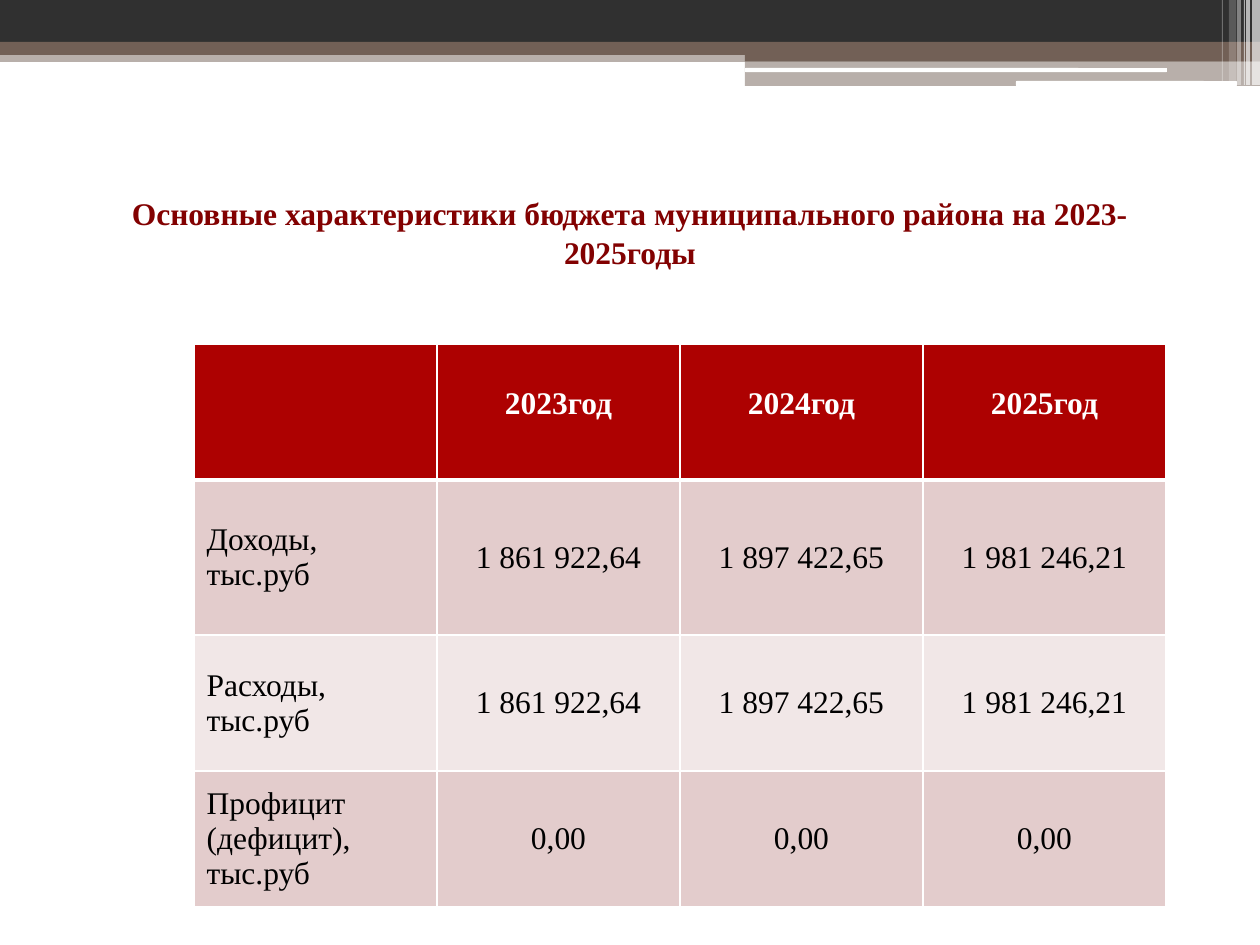
from typing import NamedTuple

from lxml import etree
from pptx import Presentation
from pptx.dml.color import RGBColor
from pptx.enum.shapes import MSO_SHAPE
from pptx.enum.text import MSO_ANCHOR, PP_ALIGN
from pptx.oxml.ns import qn
from pptx.util import Emu, Pt

RECT, ROUND = MSO_SHAPE.RECTANGLE, MSO_SHAPE.ROUNDED_RECTANGLE
LEFT, CENTER = PP_ALIGN.LEFT, PP_ALIGN.CENTER
TOP, MIDDLE = MSO_ANCHOR.TOP, MSO_ANCHOR.MIDDLE
FONT = "Times New Roman"
WHITE, BLACK, DARK, BROWN = "FFFFFF", "000000", "303030", "726056"
RED, MAROON, ROSE, PALE = "AD0101", "820101", "E3CCCC", "F1E7E7"


class Bar(NamedTuple):
    """A plain band of the page header, in px."""
    x: int
    y: int
    w: int
    h: int
    color: str
    alpha: int = 100
    kind: MSO_SHAPE = RECT


class Row(NamedTuple):
    """A table row with its height in px."""
    h: int
    fill: str
    texts: tuple


BARS = [
    Bar(0, 50, 1260, 12, BROWN, 50),
    Bar(0, 0, 1260, 43, DARK),
    Bar(0, 42, 1260, 13, BROWN),
    Bar(745, 49, 515, 12, BROWN),
    Bar(745, 61, 515, 25, BROWN, 50),
    Bar(745, 68, 422, 4, WHITE, kind=ROUND),
    Bar(1016, 81, 221, 5, WHITE, kind=ROUND),
    Bar(1252, 0, 8, 85, WHITE, 65),
    Bar(1246, 0, 4, 85, WHITE, 65),
    Bar(1244, 0, 1, 85, WHITE, 60),
    Bar(1237, 0, 4, 85, WHITE, 40),
    Bar(1229, 0, 7, 81, WHITE, 20),
    Bar(1222, 0, 1, 81, WHITE, 30),
]
ROWS = [
    Row(136, RED, ("", "2023год", "2024год", "2025год")),
    Row(155, ROSE, ("Доходы, тыс.руб", "1 861 922,64", "1 897 422,65", "1 981 246,21")),
    Row(136, PALE, ("Расходы, тыс.руб", "1 861 922,64", "1 897 422,65", "1 981 246,21")),
    Row(136, ROSE, ("Профицит (дефицит), тыс.руб", "0,00", "0,00", "0,00")),
]
COL = 243


def px(n: int) -> Emu:
    """Turn px into EMU."""
    return Emu(round(n * 914400 / 126))


def rgb(color: str) -> RGBColor:
    """Read a hex colour."""
    return RGBColor.from_string(color)


def write(frame, text: str, color: str, bold: bool, align: PP_ALIGN) -> None:
    """Put one styled paragraph in a text frame."""
    par = frame.paragraphs[0]
    par.text, par.alignment = text, align
    font = par.font
    font.name, font.size, font.bold = FONT, Pt(18), bold
    font.color.rgb = rgb(color)


def draw_bar(slide, bar: Bar) -> None:
    """Draw a header band."""
    shape = slide.shapes.add_shape(bar.kind, px(bar.x), px(bar.y), px(bar.w), px(bar.h))
    shape.shadow.inherit = False
    shape.line.fill.background()
    shape.fill.solid()
    shape.fill.fore_color.rgb = rgb(bar.color)
    if bar.alpha < 100:
        tint = shape.fill._xPr.find(".//" + qn("a:srgbClr"))
        etree.SubElement(tint, qn("a:alpha"), val=str(bar.alpha * 1000))


def draw_title(slide) -> None:
    """Write the slide heading."""
    box = slide.shapes.add_textbox(px(63), px(158), px(1134), px(147))
    frame = box.text_frame
    frame.word_wrap, frame.vertical_anchor = True, MIDDLE
    text = "Основные характеристики бюджета муниципального района на 2023-2025годы"
    write(frame, text, MAROON, True, CENTER)
    frame.paragraphs[0].line_spacing = 1.05


def edge(cell, top: int, low: int) -> None:
    """Add white borders, with the top and bottom widths in points."""
    props = cell._tc.get_or_add_tcPr()
    for i, (side, width) in enumerate(zip("LRTB", (1, 1, top, low))):
        line = etree.Element(qn("a:ln" + side), w=str(Pt(width)))
        fill = etree.SubElement(line, qn("a:solidFill"))
        etree.SubElement(fill, qn("a:srgbClr"), val=WHITE)
        props.insert(i, line)


def draw_table(slide) -> None:
    """Build the budget table."""
    high = sum(row.h for row in ROWS)
    cols = len(ROWS[0].texts)
    table = slide.shapes.add_table(
        len(ROWS), cols, px(194), px(344), px(COL * cols), px(high)).table
    for col in table.columns:
        col.width = px(COL)
    for r, row in enumerate(ROWS):
        table.rows[r].height = px(row.h)
        head = r == 0
        for c, text in enumerate(row.texts):
            cell = table.cell(r, c)
            cell.fill.solid()
            cell.fill.fore_color.rgb = rgb(row.fill)
            edge(cell, 3 if r == 1 else 1, 3 if head else 1)
            cell.vertical_anchor = TOP if head else MIDDLE
            if head:
                cell.margin_top = px(42)
            write(cell.text_frame, text, WHITE if head else BLACK, head,
                  CENTER if c else LEFT)


def main() -> None:
    """Build and save the slide."""
    deck = Presentation()
    deck.slide_width, deck.slide_height = px(1260), px(945)
    slide = deck.slides.add_slide(deck.slide_layouts[6])
    for bar in BARS:
        draw_bar(slide, bar)
    draw_title(slide)
    draw_table(slide)
    deck.save("out.pptx")


if __name__ == "__main__":
    main()
